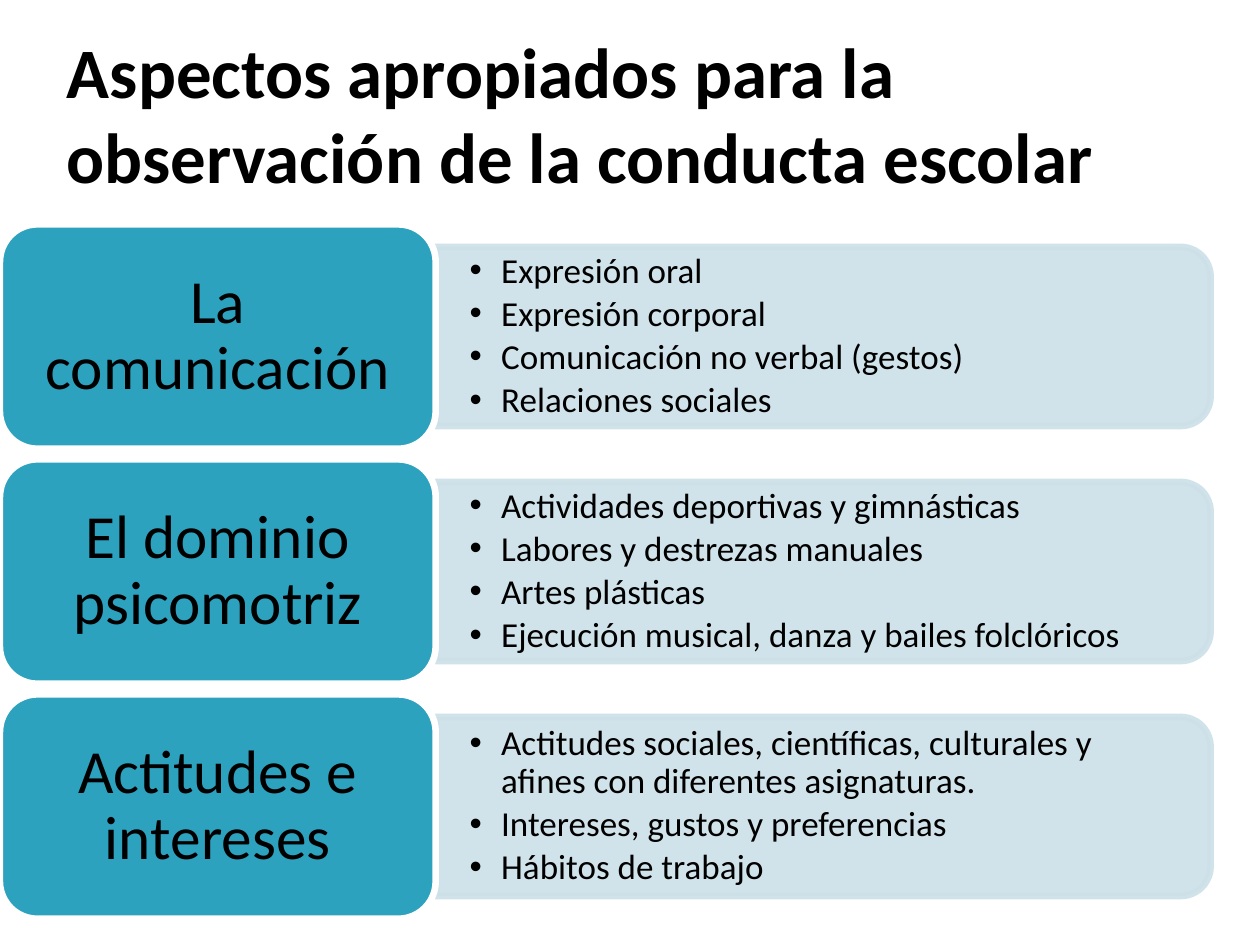
import pptx
import pptx.dml.color
import pptx.enum.shapes
import pptx.enum.text
import pptx.oxml
import pptx.oxml.ns
import pptx.util
from lxml import etree

Pt = pptx.util.Pt
SHAPES = pptx.enum.shapes.MSO_SHAPE
ALIGN = pptx.enum.text.PP_ALIGN

COLORS = {"text": "000000", "label": "2DA2BF", "panel": "CDE0E8", "edge": "FFFFFF"}
ASPECTS = [
    ("La comunicación ", [
        "Expresión oral",
        "Expresión corporal",
        "Comunicación no verbal (gestos)",
        "Relaciones sociales",
    ]),
    ("El dominio psicomotriz", [
        "Actividades deportivas y gimnásticas",
        "Labores y destrezas manuales",
        "Artes plásticas",
        "Ejecución musical, danza y bailes folclóricos",
    ]),
    ("Actitudes e intereses", [
        "Actitudes sociales, científicas, culturales y afines con diferentes asignaturas.",
        "Intereses, gustos y preferencias",
        "Hábitos de trabajo",
    ]),
]
FIRST_TOP, ROW_PITCH = 128.2, 134.3
LABEL_WIDTH, LABEL_HEIGHT = 249, 128.2
PANEL_WIDTH, PANEL_HEIGHT = 442.8, 102.4
LIST_WIDTH, LIST_HEIGHT = 437.8, 92.2


class AspectSlide:
    """Style of the slide and the slide being filled."""

    font = "Calibri"
    line_width = 3.78

    def __init__(self, slide):
        self.slide = slide

    def color(self, name):
        return pptx.dml.color.RGBColor.from_string(COLORS[name])

    def place(self, shape, left, top, width, height):
        shape.left, shape.top = Pt(left), Pt(top)
        shape.width, shape.height = Pt(width), Pt(height)

    def frame(self, shape, insets):
        """Set wrapping, middle anchor and insets (left, top, right, bottom)."""
        frame = shape.text_frame
        frame.word_wrap = True
        frame.auto_size = pptx.enum.text.MSO_AUTO_SIZE.NONE
        frame.vertical_anchor = pptx.enum.text.MSO_ANCHOR.MIDDLE
        (frame.margin_left, frame.margin_top,
         frame.margin_right, frame.margin_bottom) = map(Pt, insets)
        return frame

    def format_text(self, frame, size, align, bold=False, spacing=1.0, after=0):
        for paragraph in frame.paragraphs:
            paragraph.alignment = align
            paragraph.line_spacing = spacing
            paragraph.space_before, paragraph.space_after = Pt(0), Pt(after)
            for run in paragraph.runs:
                run.font.name, run.font.size, run.font.bold = self.font, Pt(size), bold
                run.font.color.rgb = self.color("text")

    def block(self, kind, box, fill, line):
        shape = self.slide.shapes.add_shape(kind, *map(Pt, box))
        shape.shadow.inherit = False
        shape.fill.solid()
        shape.fill.fore_color.rgb = self.color(fill)
        shape.line.color.rgb = self.color(line)
        shape.line.width = Pt(self.line_width)
        return shape

    def title(self, text):
        title = self.slide.shapes.title
        self.place(title, 31, 15.1, 648, 98.6)
        frame = self.frame(title, (7.2, 3.6, 3.6, 3.6))
        frame.text = text
        self.format_text(frame, 40.5, ALIGN.LEFT, bold=True)

    def panel(self, middle, behind):
        """Draw a panel rounded on its right side, behind the given shape."""
        box = (LABEL_WIDTH + (PANEL_WIDTH - PANEL_HEIGHT) / 2,
               middle - PANEL_WIDTH / 2, PANEL_HEIGHT, PANEL_WIDTH)
        panel = self.block(SHAPES.ROUND_2_SAME_RECTANGLE, box, "panel", "panel")
        panel.rotation = 90
        for color in panel.element.spPr.iter(pptx.oxml.ns.qn("a:srgbClr")):
            etree.SubElement(color, pptx.oxml.ns.qn("a:alpha"), val="90000")
        behind.element.addprevious(panel.element)

    def bullets(self, placeholder, middle, items):
        self.place(placeholder, LABEL_WIDTH, middle - LIST_HEIGHT / 2,
                   LIST_WIDTH, LIST_HEIGHT)
        frame = self.frame(placeholder, (19.4, 10.1, 19.4, 10.1))
        frame.text = "\n".join(items)
        self.format_text(frame, 20, ALIGN.LEFT, spacing=0.9, after=3)
        for paragraph in frame.paragraphs:
            paragraph.level = 1
            properties = paragraph._p.get_or_add_pPr()
            properties.set("marL", str(Pt(18)))
            properties.set("indent", str(Pt(-18)))
            for tag, attribute, value in (("a:buFont", "typeface", "Arial"),
                                          ("a:buChar", "char", "•")):
                etree.SubElement(properties, pptx.oxml.ns.qn(tag)).set(attribute, value)

    def label(self, middle, text):
        box = (0, middle - LABEL_HEIGHT / 2, LABEL_WIDTH, LABEL_HEIGHT)
        label = self.block(SHAPES.ROUNDED_RECTANGLE, box, "label", "edge")
        frame = self.frame(label, (16.8, 11.5, 16.8, 11.5))
        frame.text = text
        self.format_text(frame, 35, ALIGN.CENTER, spacing=0.9)


def main():
    presentation = pptx.Presentation()
    presentation.slide_width, presentation.slide_height = Pt(720), Pt(540)
    comparison = presentation.slide_layouts[4]
    slide = presentation.slides.add_slide(comparison)
    _, *lists = slide.placeholders
    page = AspectSlide(slide)
    page.title("Aspectos apropiados para la observación de la conducta escolar")
    for row, ((name, items), placeholder) in enumerate(zip(ASPECTS, lists)):
        middle = FIRST_TOP + row * ROW_PITCH + LABEL_HEIGHT / 2
        page.panel(middle, behind=placeholder)
        page.bullets(placeholder, middle, items)
        page.label(middle, name)
    for unused in lists[len(ASPECTS):]:
        unused.element.getparent().remove(unused.element)
    presentation.save("out.pptx")


if __name__ == "__main__":
    main()
